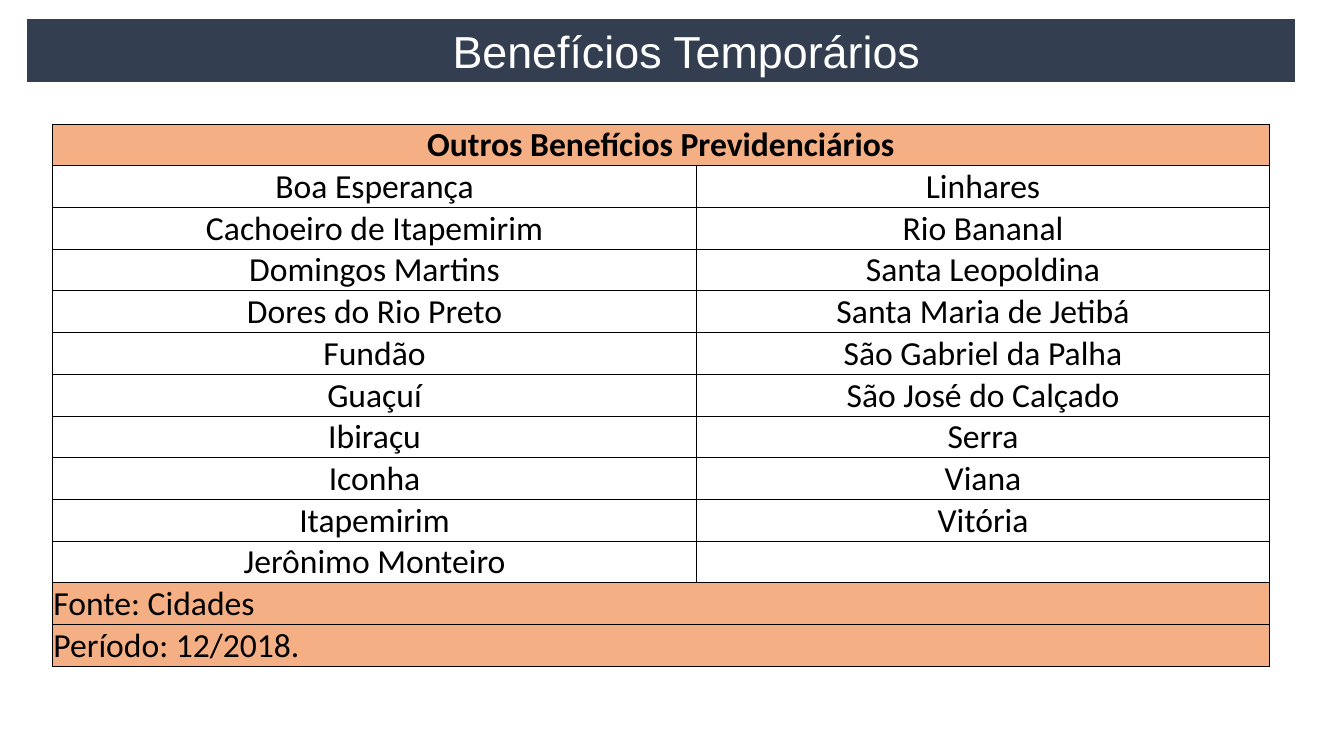
"""Builds the temporary benefits slide with its table of municipalities."""
from dataclasses import dataclass
from itertools import zip_longest

from lxml import etree
from pptx import Presentation, util as u
from pptx.dml.color import RGBColor
from pptx.enum import shapes, text
from pptx.oxml import ns


@dataclass(frozen=True)
class Theme:
    """Colours, fonts and type sizes of the slide."""
    navy: str = "333F50"
    orange: str = "F4B084"
    white: str = "FFFFFF"
    black: str = "000000"
    title_font: str = "Arial"
    table_font: str = "Calibri"
    title_size: int = 32
    table_size: int = 24


THEME = Theme()
LEFT_CITIES = ["Boa Esperança", "Cachoeiro de Itapemirim", "Domingos Martins",
               "Dores do Rio Preto", "Fundão", "Guaçuí", "Ibiraçu", "Iconha",
               "Itapemirim", "Jerônimo Monteiro"]
RIGHT_CITIES = ["Linhares", "Rio Bananal", "Santa Leopoldina",
                "Santa Maria de Jetibá", "São Gabriel da Palha",
                "São José do Calçado", "Serra", "Viana", "Vitória"]


def set_attrs(obj, values):
    """Set every attribute named in a dict of format values."""
    for name, value in values.items():
        setattr(obj, name, value)


def paint(fill, colour):
    """Give a fill one solid colour."""
    fill.solid()
    fill.fore_color.rgb = RGBColor.from_string(colour)


def write(tf, words, align, colour, **font):
    """Write one formatted paragraph and return it."""
    p = tf.paragraphs[0]
    p.alignment = align
    r = p.add_run()
    r.text = words
    set_attrs(r.font, font)
    r.font.color.rgb = RGBColor.from_string(colour)
    return p


def add_title(s, words):
    """Add the title bar."""
    sp = s.shapes.add_shape(shapes.MSO_SHAPE.RECTANGLE, u.Inches(0.26),
                            u.Inches(0.18), u.Inches(12.6), u.Inches(0.64))
    sp.shadow.inherit = False
    paint(sp.fill, THEME.navy)
    paint(sp.line.fill, THEME.white)
    sp.line.width = u.Pt(1.5)
    tf = sp.text_frame
    set_attrs(tf, {"word_wrap": True,
                   "auto_size": text.MSO_AUTO_SIZE.SHAPE_TO_FIT_TEXT,
                   "vertical_anchor": text.MSO_ANCHOR.MIDDLE})
    p = write(tf, words, text.PP_ALIGN.CENTER, THEME.white,
              name=THEME.title_font, size=u.Pt(THEME.title_size))
    p.level = 1
    pPr = p._p.get_or_add_pPr()
    pPr.set("marL", str(u.Inches(0.5)))
    pPr.set("indent", "0")


def add_borders(cell):
    """Draw a thin black line on each side of a cell."""
    tcPr = cell._tc.get_or_add_tcPr()
    for side in "LRTB":
        ln = etree.SubElement(tcPr, ns.qn(f"a:ln{side}"), w=str(u.Pt(0.5)))
        fill = etree.SubElement(ln, ns.qn("a:solidFill"))
        etree.SubElement(fill, ns.qn("a:srgbClr"), val=THEME.black)


def format_cell(cell, colour):
    """Set the borders, fill, margins and anchor of a cell."""
    add_borders(cell)
    paint(cell.fill, colour)
    edge = u.Inches(0.01)
    set_attrs(cell, {"margin_left": edge, "margin_right": edge,
                     "margin_top": edge, "margin_bottom": 0,
                     "vertical_anchor": text.MSO_ANCHOR.BOTTOM})


def add_city_table(s, heading, notes):
    """Add the table with a heading row, city pairs and note rows."""
    pairs = list(zip_longest(LEFT_CITIES, RIGHT_CITIES))
    rows = [(heading,), *pairs, *((note,) for note in notes)]
    tb = s.shapes.add_table(len(rows), 2, u.Inches(0.52), u.Inches(1.23),
                            u.Inches(12.07), u.Inches(5.38)).table
    set_attrs(tb, {"first_row": False, "horz_banding": False})
    for column, width in zip(tb.columns, (6.39, 5.68)):
        column.width = u.Inches(width)
    for i, row in enumerate(rows):
        spanned = len(row) == 1
        for cell in tb.rows[i].cells:
            format_cell(cell, THEME.orange if spanned else THEME.white)
        if spanned:
            tb.cell(i, 0).merge(tb.cell(i, 1))
        align = (text.PP_ALIGN.LEFT if spanned and i
                 else text.PP_ALIGN.CENTER)
        for j, words in enumerate(row):
            if words:
                write(tb.cell(i, j).text_frame, words, align, THEME.black,
                      name=THEME.table_font, size=u.Pt(THEME.table_size),
                      bold=i == 0)


def main():
    """Build and save the slide."""
    prs = Presentation()
    set_attrs(prs, {"slide_width": u.Inches(13.33),
                    "slide_height": u.Inches(7.5)})
    s = prs.slides.add_slide(prs.slide_layouts[6])
    add_title(s, "Benefícios Temporários")
    add_city_table(s, "Outros Benefícios Previdenciários",
                   ["Fonte: Cidades", "Período: 12/2018."])
    prs.save("out.pptx")


if __name__ == "__main__":
    main()
